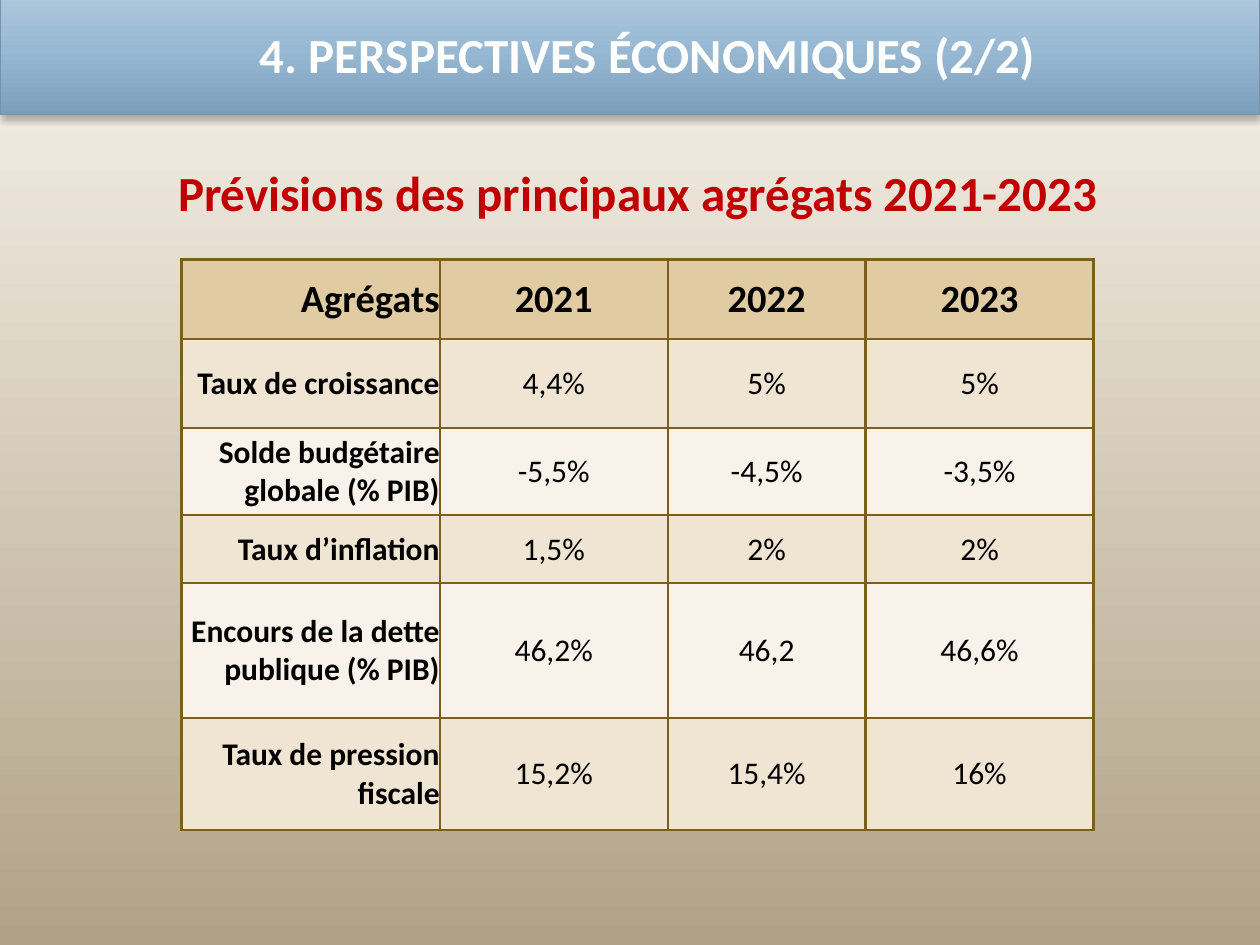
from lxml import etree
from pptx import Presentation
from pptx.dml.color import RGBColor
from pptx.enum.text import MSO_ANCHOR, PP_ALIGN
from pptx.oxml import parse_xml
from pptx.oxml.ns import nsdecls, qn
from pptx.util import Inches, Pt

CENTER, RIGHT = PP_ALIGN.CENTER, PP_ALIGN.RIGHT
MIDDLE = MSO_ANCHOR.MIDDLE
FONT = "Calibri"

COLORS = {
    "title": "FFFFFF",
    "title_line": "7792A8",
    "heading": "C00000",
    "text": "000000",
    "border": "7C5F1E",
    "header": "E0CBA3",
    "odd": "F0E4D2",
    "even": "F8F2EA",
}
BACKGROUND_STOPS = [(0, "F8F3EB"), (100, "B1A287")]
TITLE_STOPS = [(0, "B2CADE"), (50, "97B8D3"), (100, "7B9EBB")]

COLUMNS = [2.05, 1.81, 1.57, 1.81]
ROW_HEIGHTS = [0.63, 0.71, 0.69, 0.54, 1.07, 0.89]
ROWS = [
    ["Agrégats", "2021", "2022", "2023"],
    ["Taux de croissance", "4,4%", "5%", "5%"],
    ["Solde budgétaire globale (% PIB)", "-5,5%", "-4,5%", "-3,5%"],
    ["Taux d’inflation", "1,5%", "2%", "2%"],
    ["Encours de la dette publique (% PIB)", "46,2%", "46,2", "46,6%"],
    ["Taux de pression fiscale", "15,2%", "15,4%", "16%"],
]


def rgb(name):
    return RGBColor.from_string(COLORS[name])


def set_text(tf, text, size, color, align, bold=True):
    tf.text = text
    p = tf.paragraphs[0]
    p.alignment = align
    font = p.runs[0].font
    font.name, font.size, font.bold = FONT, Pt(size), bold
    font.color.rgb = rgb(color)
    return p


def set_gradient(fill, element, stops):
    fill.gradient()
    fill.gradient_angle = 270
    stop_list = element.find(".//" + qn("a:gsLst"))
    for old in list(stop_list):
        stop_list.remove(old)
    for position, color in stops:
        stop = etree.SubElement(stop_list, qn("a:gs"), pos=str(position * 1000))
        etree.SubElement(stop, qn("a:srgbClr"), val=color)


def add_shadow(sp):
    sp._element.spPr.append(parse_xml(
        f'<a:effectLst {nsdecls("a")}>'
        f'<a:outerShdw blurRad="{Pt(4)}" dist="{Pt(2)}" dir="5400000" rotWithShape="0">'
        '<a:srgbClr val="000000"><a:alpha val="28000"/></a:srgbClr>'
        '</a:outerShdw></a:effectLst>'))


def format_title(sp, text):
    sp.left, sp.top = Inches(0), Inches(-0.11)
    sp.width, sp.height = Inches(10), Inches(1.02)
    set_gradient(sp.fill, sp._element, TITLE_STOPS)
    sp.line.color.rgb = rgb("title_line")
    sp.line.width = Pt(0.75)
    add_shadow(sp)
    tf = sp.text_frame
    tf.vertical_anchor = MIDDLE
    tf.margin_left, tf.margin_top = Inches(0.38), Inches(0.17)
    p = set_text(tf, text, 28, "title", CENTER)
    p.line_spacing = 0.9


def add_heading(slide, text):
    sp = slide.shapes.add_textbox(Inches(0.12), Inches(1.15), Inches(9.88), Inches(0.8))
    sp.text_frame.word_wrap = True
    p = set_text(sp.text_frame, text, 28, "heading", CENTER)
    p.line_spacing = 1.2


def set_borders(cell):
    tc_pr = cell._tc.get_or_add_tcPr()
    for side in ("lnL", "lnR", "lnT", "lnB"):
        tc_pr.append(parse_xml(
            f'<a:{side} {nsdecls("a")} w="{Pt(1.5)}"><a:solidFill>'
            f'<a:srgbClr val="{COLORS["border"]}"/></a:solidFill></a:{side}>'))


def format_cell(cell, text, row, column):
    fill = "header" if row == 0 else "odd" if row % 2 else "even"
    set_borders(cell)
    cell.fill.solid()
    cell.fill.fore_color.rgb = rgb(fill)
    cell.margin_left = cell.margin_right = cell.margin_top = cell.margin_bottom = 0
    cell.vertical_anchor = MIDDLE
    set_text(cell.text_frame, text, 18 if row else 22, "text",
             CENTER if column else RIGHT, bold=row == 0 or column == 0)


def add_forecast_table(slide):
    table = slide.shapes.add_table(
        len(ROWS), len(COLUMNS), Inches(1.44), Inches(2.06),
        Inches(sum(COLUMNS)), Inches(sum(ROW_HEIGHTS))).table
    for column, width in zip(table.columns, COLUMNS):
        column.width = Inches(width)
    for i, (height, values) in enumerate(zip(ROW_HEIGHTS, ROWS)):
        table.rows[i].height = Inches(height)
        for j, value in enumerate(values):
            format_cell(table.cell(i, j), value, i, j)


def main():
    prs = Presentation()
    prs.slide_width, prs.slide_height = Inches(10), Inches(7.5)
    slide = prs.slides.add_slide(prs.slide_layouts[5])
    set_gradient(slide.background.fill, slide.element, BACKGROUND_STOPS)
    format_title(slide.shapes.title, "4. PERSPECTIVES ÉCONOMIQUES (2/2)")
    add_heading(slide, "Prévisions des principaux agrégats 2021-2023")
    add_forecast_table(slide)
    prs.save("out.pptx")


if __name__ == "__main__":
    main()
